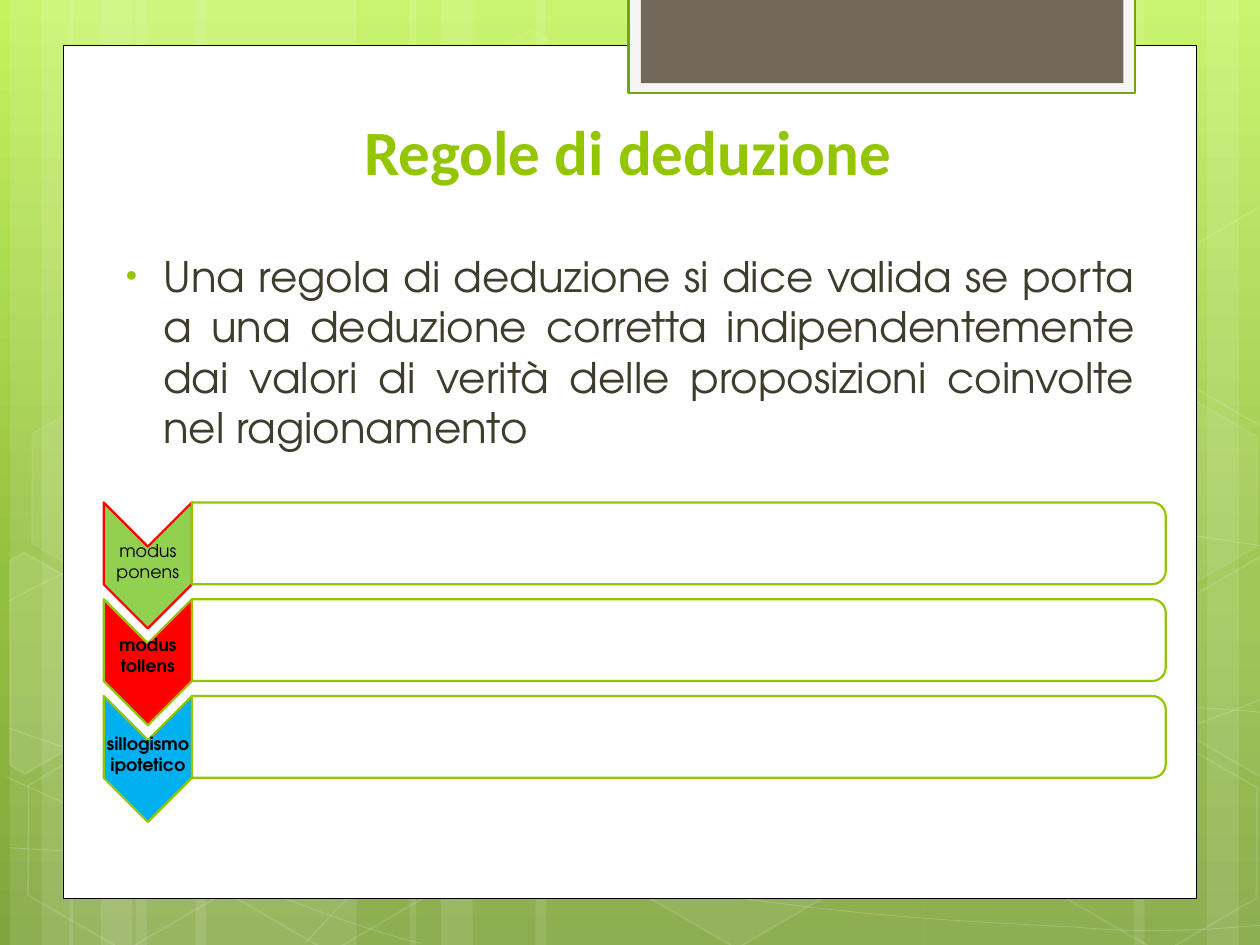
from copy import deepcopy
from math import cos, radians, sin
from lxml import etree
from pptx import Presentation
from pptx.dml.color import RGBColor
from pptx.enum.shapes import MSO_SHAPE
from pptx.enum.text import MSO_ANCHOR, PP_ALIGN
from pptx.oxml.ns import qn
from pptx.util import Cm, Pt

RECT, HEXAGON = MSO_SHAPE.RECTANGLE, MSO_SHAPE.HEXAGON
CHEVRON, ROUND_TOP = MSO_SHAPE.CHEVRON, MSO_SHAPE.ROUND_2_SAME_RECTANGLE
CENTER, JUSTIFY = PP_ALIGN.CENTER, PP_ALIGN.JUSTIFY
TOP, MIDDLE, BOTTOM = MSO_ANCHOR.TOP, MSO_ANCHOR.MIDDLE, MSO_ANCHOR.BOTTOM
COLORS = {
    "white": "FFFFFF", "black": "000000", "accent": "94C600", "text": "3E3D2D",
    "tab": "71685A", "tab_frame": "F5F5F5", "tab_line": "74A510",
    "green": "92D050", "red": "FF0000", "blue": "00B0F0",
    "sky": "C3F35F", "meadow": "93BF3F", "ground": "81A53E",
}
BODY_FONT = "TeX Gyre Adventor"
TILT = 30


def paint(shape, fill=None, line=None, width=1.25, fill_alpha=100, line_alpha=100):
    """Set fill and outline; alpha values are percent opacity."""
    shape.shadow.inherit = False
    for target, color, alpha, tag in (
        (shape.fill, fill, fill_alpha, "a:solidFill"),
        (shape.line.fill, line, line_alpha, "a:ln/a:solidFill"),
    ):
        if color is None:
            target.background()
            continue
        target.solid()
        target.fore_color.rgb = RGBColor.from_string(COLORS[color])
        if alpha < 100:
            steps = "/".join(qn(step) for step in f"{tag}/a:srgbClr".split("/"))
            rgb = shape.element.spPr.find(steps)
            etree.SubElement(rgb, qn("a:alpha"), val=str(alpha * 1000))
    if line:
        shape.line.width = Pt(width)


def add_text(box, text, size, font, color, align, anchor, bold=False, inset=None):
    """Add a wrapped one-paragraph text box at box (cm) and return its paragraph."""
    frame = slide.shapes.add_textbox(*map(Cm, box)).text_frame
    frame.word_wrap = True
    frame.vertical_anchor = anchor
    if inset is not None:
        frame.margin_left = frame.margin_right = Cm(inset)
        frame.margin_top = frame.margin_bottom = Cm(inset)
    paragraph = frame.paragraphs[0]
    paragraph.text = text
    paragraph.alignment = align
    paragraph.font.name, paragraph.font.size = font, Pt(size)
    paragraph.font.bold = bold
    paragraph.font.color.rgb = RGBColor.from_string(COLORS[color])
    return paragraph


prs = Presentation()
prs.slide_width, prs.slide_height = Cm(25.4), Cm(19.05)
slide = prs.slides.add_slide(prs.slide_layouts[6])
shapes = slide.shapes

# Background gradient, top to bottom
backdrop = slide.background.fill
backdrop.gradient()
backdrop.gradient_angle = 270
stop_list = slide.element.find(".//" + qn("a:gsLst"))
stop_list.append(deepcopy(stop_list[0]))
for stop, (position, color) in zip(
    backdrop.gradient_stops, ((0, "sky"), (0.62, "meadow"), (1, "ground"))
):
    stop.position = position
    stop.color.rgb = RGBColor.from_string(COLORS[color])

# Translucent vertical stripes: left, width
for left, width in (
    (2.74, 4.45), (0.2, 1.27), (0.84, 2.12), (3.94, 4.45), (1.4, 1.27), (2.03, 2.12),
    (18.62, 4.45), (24.33, 1.27), (22.86, 2.12), (10.8, 7.83), (8.26, 1.27), (8.89, 2.12),
):
    stripe = shapes.add_shape(RECT, Cm(left), 0, Cm(width), prs.slide_height)
    paint(stripe, "white", fill_alpha=10)

# Thin waves: a start point, then two control points and an end point per Bézier segment
WAVES = (
    ((0.18, 17.09), (1.55, 17.17), (2.92, 17.25), (4.83, 17.22), (6.73, 17.2),
     (9.09, 17.15), (11.63, 16.89), (14.17, 16.64), (17.78, 16.15), (20.12, 15.67),
     (22.43, 15.19), (24.82, 14.43), (25.58, 14)),
    ((0.18, 12.12), (0.91, 11.71), (1.65, 11.33), (3.07, 10.95), (4.52, 10.57),
     (6.58, 10.01), (8.81, 9.83), (11.07, 9.65), (13.82, 9.63), (16.61, 9.83),
     (19.41, 10.03), (24.05, 10.82), (25.58, 11.02)),
    ((0.15, 15.67), (3.23, 17.07), (6.27, 18.47), (8.48, 19.02)),
    ((0.18, 14.68), (0.97, 14.96), (1.78, 15.24), (3.25, 15.65), (4.72, 16.03),
     (6.93, 16.66), (9.07, 17.09), (11.18, 17.53), (13.84, 17.98), (15.95, 18.24),
     (18.06, 18.52), (20.32, 18.62), (21.67, 18.69), (22.99, 18.8), (23.34, 18.75),
     (24, 18.75), (24.66, 18.72), (25.12, 18.67), (25.58, 18.64)),
    ((6.15, 19.02), (6.6, 18.52), (7.06, 18.01), (7.67, 17.55), (8.28, 17.09),
     (9.14, 16.59), (9.86, 16.23), (10.57, 15.88), (11, 15.72), (11.94, 15.47),
     (12.85, 15.21), (14.55, 14.86), (15.44, 14.68), (16.36, 14.5), (16.48, 14.5),
     (17.27, 14.45), (18.06, 14.38), (19.3, 14.3), (20.17, 14.27), (21.06, 14.25),
     (22.5, 14.27), (22.5, 14.27), (22.5, 14.27), (24.21, 14.27), (24.21, 14.27),
     (24.21, 14.27), (24.66, 14.3), (25.1, 14.33), (25.32, 14.35), (25.55, 14.38),
     (25.48, 14.35), (25.55, 14.38)),
)
STRAIGHT_ENDS = {(24.21, 14.27)}
for wave in WAVES:
    # A straight stretch is listed with its end point three times
    start, *others = [(Cm(x), Cm(y)) for x, y in wave]
    builder = shapes.build_freeform(*start)
    builder.add_line_segments(others, close=False)
    curve = builder.convert_to_shape()
    paint(curve, line="white", width=0.5, line_alpha=20)
    segments = list(curve.element.iter(qn("a:lnTo")))
    for i in range(0, len(segments) - 2, 3):
        if wave[i + 3] in STRAIGHT_ENDS and wave[i + 2] == wave[i + 3]:
            continue
        bezier = etree.Element(qn("a:cubicBezTo"))
        segments[i].addprevious(bezier)
        for segment in segments[i:i + 3]:
            bezier.append(segment[0])
            segment.getparent().remove(segment)

# Hexagons: left, top, fill opacity, line opacity
for left, top, fill_alpha, line_alpha in (
    (8.48, 0.91, 4, 8), (12.62, 14.96, 6, 12), (0.28, 15.01, 0, 12),
    (0.36, 7.92, 7, 8), (4.42, 15.04, 0, 12), (19.13, 11.51, 10, 12),
    (21.18, 15.06, 0, 12), (21.18, 7.98, 7, 8),
):
    hexagon = shapes.add_shape(HEXAGON, Cm(left), Cm(top), Cm(4.45), Cm(3.86))
    hexagon.rotation = TILT
    hexagon.adjustments[0] = 0.285
    paint(hexagon, "white" if fill_alpha else None, "white", 1, fill_alpha, line_alpha)

# Hexagons cut by the slide edge: fill opacity, pivot, corners as they stand after tilting
for fill_alpha, (pivot_x, pivot_y), corners in (
    (10, (0.91, 13.59), ((0.2, 11.3), (0.48, 11.13), (2.44, 12.24), (2.41, 14.48),
                         (0.51, 15.6), (0.2, 15.42))),
    (4, (25.02, 13.21), ((23.52, 12.32), (25.43, 11.2), (25.63, 11.33), (25.63, 15.57),
                         (25.45, 15.67), (23.52, 14.55))),
    (0, (25.02, 6.12), ((23.52, 5.26), (25.43, 4.14), (25.65, 4.27), (25.63, 8.51),
                        (25.45, 8.61), (23.52, 7.49))),
):
    c, s = cos(radians(TILT)), sin(radians(TILT))
    start, *others = [
        (Cm(pivot_x + (x - pivot_x) * c + (y - pivot_y) * s),
         Cm(pivot_y - (x - pivot_x) * s + (y - pivot_y) * c))
        for x, y in corners
    ]
    builder = shapes.build_freeform(*start)
    builder.add_line_segments(others)
    cut_hexagon = builder.convert_to_shape()
    cut_hexagon.rotation = TILT
    paint(cut_hexagon, "white" if fill_alpha else None, "white", 1, fill_alpha, 12)

# White page and the tab at its top
for box, fill, line, width in (
    ((1.27, 0.91, 22.86, 17.2), "white", "black", 0.5),
    ((12.67, -0.05, 10.21, 1.93), "tab_frame", "tab_line", 1.25),
    ((12.92, -0.05, 9.73, 1.73), "tab", None, 0),
):
    paint(shapes.add_shape(RECT, *map(Cm, box)), fill, line, width)

add_text((2.9, 2.32, 19.51, 1.6), "Regole di deduzione", 36, "Calibri", "accent",
         CENTER, BOTTOM, bold=True)
definition = add_text(
    (2.09, 4.92, 21.03, 11.48),
    "Una regola di deduzione si dice valida se porta a una deduzione corretta "
    "indipendentemente dai valori di verità delle proposizioni coinvolte nel ragionamento",
    24, BODY_FONT, "text", JUSTIFY, TOP)
definition.space_before = Pt(4.8)
properties = definition._p.get_or_add_pPr()
properties.set("marL", str(Cm(0.95)))
properties.set("indent", str(Cm(-0.75)))
bullet_color = etree.SubElement(properties, qn("a:buClr"))
etree.SubElement(bullet_color, qn("a:srgbClr"), val=COLORS["accent"])
etree.SubElement(properties, qn("a:buSzPct"), val="76000")
etree.SubElement(properties, qn("a:buFont"), typeface="Arial")
etree.SubElement(properties, qn("a:buChar"), char="•")
properties.append(properties.find(qn("a:defRPr")))  # the schema puts it last

# One row per rule: chevron, label and empty panel
ROW_PITCH = 1.95
for row, (rule, fill, line, bold, label_top) in enumerate((
    ("modus ponens", "green", "red", False, 10.93),
    ("modus tollens", "red", "accent", True, 10.87),
    ("sillogismo ipotetico", "blue", "accent", True, 10.93),
)):
    offset = row * ROW_PITCH
    chevron = shapes.add_shape(CHEVRON, Cm(1.71), Cm(10.51 + offset), Cm(2.54), Cm(1.78))
    chevron.rotation = 90
    paint(chevron, fill, line)
    add_text((2.09, label_top + offset, 1.78, 0.76), rule, 10, BODY_FONT, "black",
             CENTER, MIDDLE, bold, inset=0.03)
    panel = shapes.add_shape(ROUND_TOP, Cm(12.86), Cm(1.14 + offset), Cm(1.65), Cm(19.63))
    panel.rotation = 90
    paint(panel, "white", "accent", fill_alpha=90)

prs.save("out.pptx")
